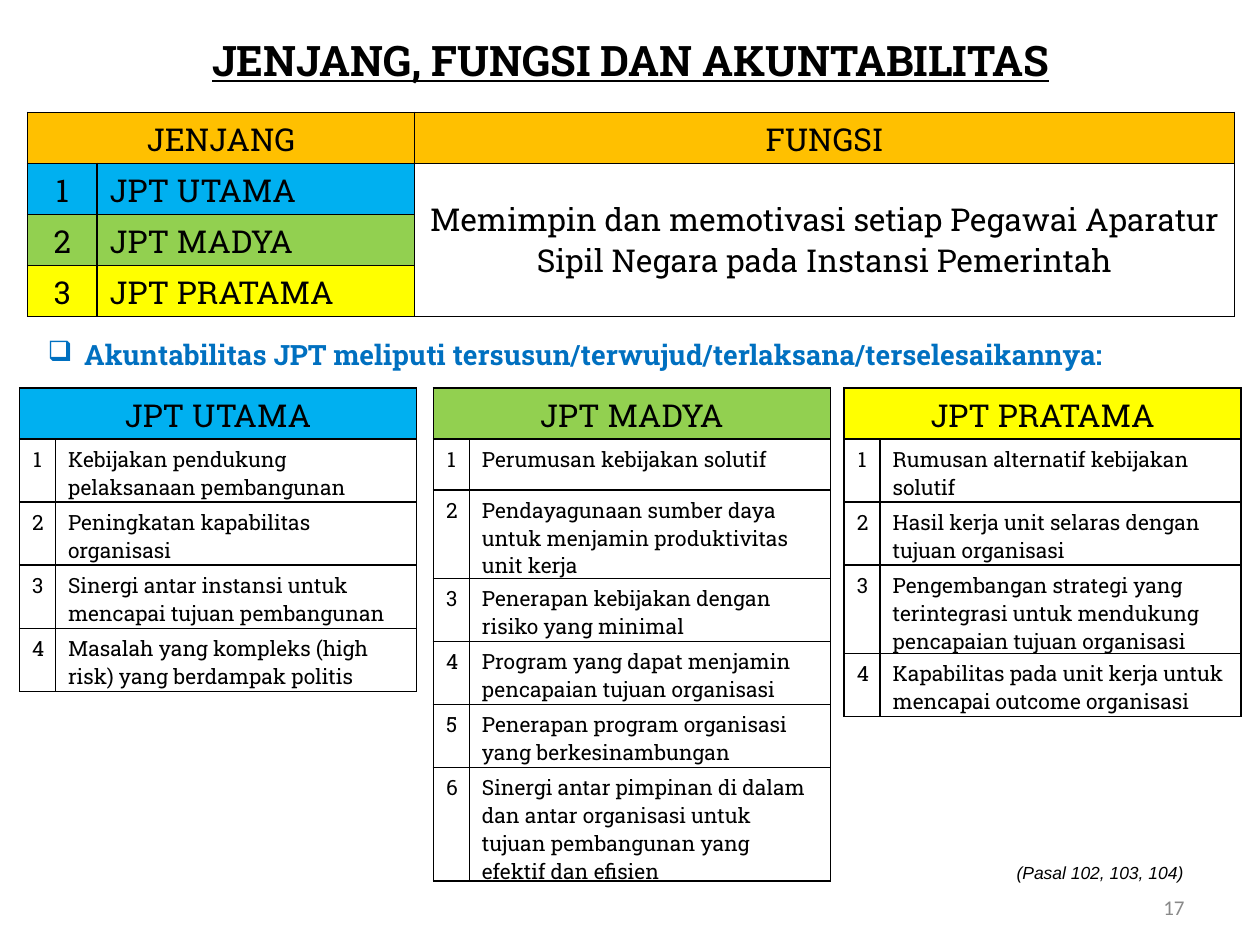
from typing import NamedTuple

from lxml import etree
from pptx import Presentation
from pptx.dml.color import RGBColor
from pptx.enum.text import MSO_ANCHOR, MSO_AUTO_SIZE, PP_ALIGN
from pptx.oxml.ns import qn
from pptx.util import Inches, Pt

LEFT, MID, RIGHT = PP_ALIGN.LEFT, PP_ALIGN.CENTER, PP_ALIGN.RIGHT
TOP, CENTRE = MSO_ANCHOR.TOP, MSO_ANCHOR.MIDDLE
FIXED, GROW = MSO_AUTO_SIZE.NONE, MSO_AUTO_SIZE.SHAPE_TO_FIT_TEXT
WIDE, HIGH = Inches(10), Inches(7.5)
SLAB = "Roboto Slab"
ROW = 5.4
HUES = {
    "ink": "000000", "paper": "FFFFFF", "gold": "FFC000", "sky": "00B0F0",
    "leaf": "92D050", "sun": "FFFF00", "blue": "0070C0", "grey": "898989",
}


class Box(NamedTuple):
    """A place in percent of the slide's size."""
    left: float
    top: float
    width: float
    height: float


class Style(NamedTuple):
    """The look of one paragraph."""
    size: int
    hue: str = "ink"
    face: str = SLAB
    align: PP_ALIGN = LEFT
    bold: bool = False
    slant: bool = False
    line: bool = False


class Rank(NamedTuple):
    """A rank with its colour, left edge and duties."""
    name: str
    hue: str
    left: float
    duties: list[str]


RANKS = [
    Rank("JPT UTAMA", "sky", 1.55, [
        "Kebijakan pendukung pelaksanaan pembangunan",
        "Peningkatan kapabilitas organisasi",
        "Sinergi antar instansi untuk mencapai tujuan pembangunan",
        "Masalah yang kompleks (high risk) yang berdampak politis",
    ]),
    Rank("JPT MADYA", "leaf", 34.4, [
        "Perumusan kebijakan solutif",
        "Pendayagunaan sumber daya untuk menjamin produktivitas unit kerja",
        "Penerapan kebijakan dengan risiko yang minimal",
        "Program yang dapat menjamin pencapaian tujuan organisasi",
        "Penerapan program organisasi yang berkesinambungan",
        "Sinergi antar pimpinan di dalam dan antar organisasi untuk tujuan "
        "pembangunan yang efektif dan efisien",
    ]),
    Rank("JPT PRATAMA", "sun", 67, [
        "Rumusan alternatif kebijakan solutif",
        "Hasil kerja unit selaras dengan tujuan organisasi",
        "Pengembangan strategi yang terintegrasi untuk mendukung pencapaian "
        "tujuan organisasi",
        "Kapabilitas pada unit kerja untuk mencapai outcome organisasi",
    ]),
]
HEAD = Style(18, align=MID)
NAME = Style(18)
ITEM = Style(12)
NUM = Style(12, align=MID)


def tint(hue: str) -> RGBColor:
    """Look up a colour by name."""
    return RGBColor.from_string(HUES[hue])


def place(box: Box) -> tuple[int, ...]:
    """Turn percents of the slide into lengths."""
    return tuple(int(part * side / 100) for part, side in zip(box, (WIDE, HIGH) * 2))


def write(frame, text: str, style: Style) -> None:
    """Put one styled paragraph in a text frame."""
    para = frame.paragraphs[0]
    para.text = text
    para.alignment = style.align
    font = para.font
    font.size, font.name = Pt(style.size), style.face
    font.bold, font.italic, font.underline = style.bold, style.slant, style.line
    font.color.rgb = tint(style.hue)


def label(slide, box: Box, text: str, style: Style, anchor=TOP, wrap=True) -> None:
    """Add a plain text box."""
    frame = slide.shapes.add_textbox(*place(box)).text_frame
    frame.word_wrap = wrap
    frame.auto_size = FIXED if wrap else GROW
    frame.vertical_anchor = anchor
    write(frame, text, style)


def head(slide, text: str) -> None:
    """Fill and place the title."""
    title = slide.shapes.title
    title.left, title.top, title.width, title.height = place(Box(2.8, 3, 94.5, 6.1))
    frame = title.text_frame
    frame.auto_size, frame.vertical_anchor = FIXED, TOP
    write(frame, text, Style(24, align=MID, bold=True, line=True))
    frame.paragraphs[0].space_after = Pt(3)


def point(slide, box: Box, text: str, style: Style) -> None:
    """Add a text box with one bulleted line."""
    frame = slide.shapes.add_textbox(*place(box)).text_frame
    frame.word_wrap = True
    props = frame.paragraphs[0]._p.get_or_add_pPr()
    props.set("marL", str(Inches(0.29)))
    props.set("indent", str(-Inches(0.29)))
    etree.SubElement(props, qn("a:buChar"), char="❑")
    write(frame, text, style)


def grid(slide, box: Box, cols: list[float], count: int):
    """Add a bordered, unbanded table with even rows."""
    table = slide.shapes.add_table(count, len(cols), *place(box)).table
    table.first_row = table.horz_banding = False
    for col, share in zip(table.columns, cols):
        col.width = int(share * WIDE / 100)
    for row in table.rows:
        row.height = int(ROW * HIGH / 100)
    for cell in table.iter_cells():
        props = cell._tc.get_or_add_tcPr()
        for side in "LRTB":
            edge = etree.SubElement(props, qn(f"a:ln{side}"), w=str(Pt(1)))
            ink = etree.SubElement(edge, qn("a:solidFill"))
            etree.SubElement(ink, qn("a:srgbClr"), val=HUES["ink"])
    return table


def fill(cell, text: str, style: Style, hue: str = "paper") -> None:
    """Write and colour one cell."""
    write(cell.text_frame, text, style)
    cell.fill.solid()
    cell.fill.fore_color.rgb = tint(hue)


def duties(slide, rank: Rank) -> None:
    """Draw the numbered duties of one rank."""
    count = len(rank.duties) + 1
    table = grid(slide, Box(rank.left, 41.07, 31.5, ROW * count), [2.85, 28.65], count)
    table.cell(0, 0).merge(table.cell(0, 1))
    fill(table.cell(0, 0), rank.name, HEAD, rank.hue)
    for row, duty in enumerate(rank.duties, 1):
        fill(table.cell(row, 0), str(row), NUM)
        fill(table.cell(row, 1), duty, ITEM)


def levels(slide) -> None:
    """Draw the table of ranks and their function."""
    count = len(RANKS) + 1
    table = grid(slide, Box(2.2, 11.9, 95.8, ROW * count), [5.5, 25.2, 65.1], count)
    table.cell(0, 0).merge(table.cell(0, 1))
    table.cell(1, 2).merge(table.cell(count - 1, 2))
    fill(table.cell(0, 0), "JENJANG", HEAD, "gold")
    fill(table.cell(0, 2), "FUNGSI", HEAD, "gold")
    for row, rank in enumerate(RANKS, 1):
        fill(table.cell(row, 0), str(row), HEAD, rank.hue)
        fill(table.cell(row, 1), rank.name, NAME, rank.hue)
    role = table.cell(1, 2)
    fill(role, "Memimpin dan memotivasi setiap Pegawai Aparatur Sipil Negara "
         "pada Instansi Pemerintah", HEAD)
    role.vertical_anchor = CENTRE


def main() -> None:
    """Build and save the slide."""
    deck = Presentation()
    deck.slide_width, deck.slide_height = WIDE, HIGH
    slide = deck.slides.add_slide(deck.slide_layouts[5])
    head(slide, "JENJANG, FUNGSI DAN AKUNTABILITAS")
    point(slide, Box(2.8, 35.1, 94.5, 5),
          "Akuntabilitas JPT meliputi tersusun/terwujud/terlaksana/terselesaikannya:",
          Style(16, "blue", bold=True))
    label(slide, Box(71.7, 93.3, 23.3, 5.3), "17",
          Style(12, "grey", "Calibri", RIGHT), CENTRE)
    label(slide, Box(79.7, 90.6, 15.3, 3.6), "(Pasal 102, 103, 104)",
          Style(10, face="Arial", slant=True), wrap=False)
    for rank in RANKS:
        duties(slide, rank)
    levels(slide)
    deck.save("out.pptx")


if __name__ == "__main__":
    main()
